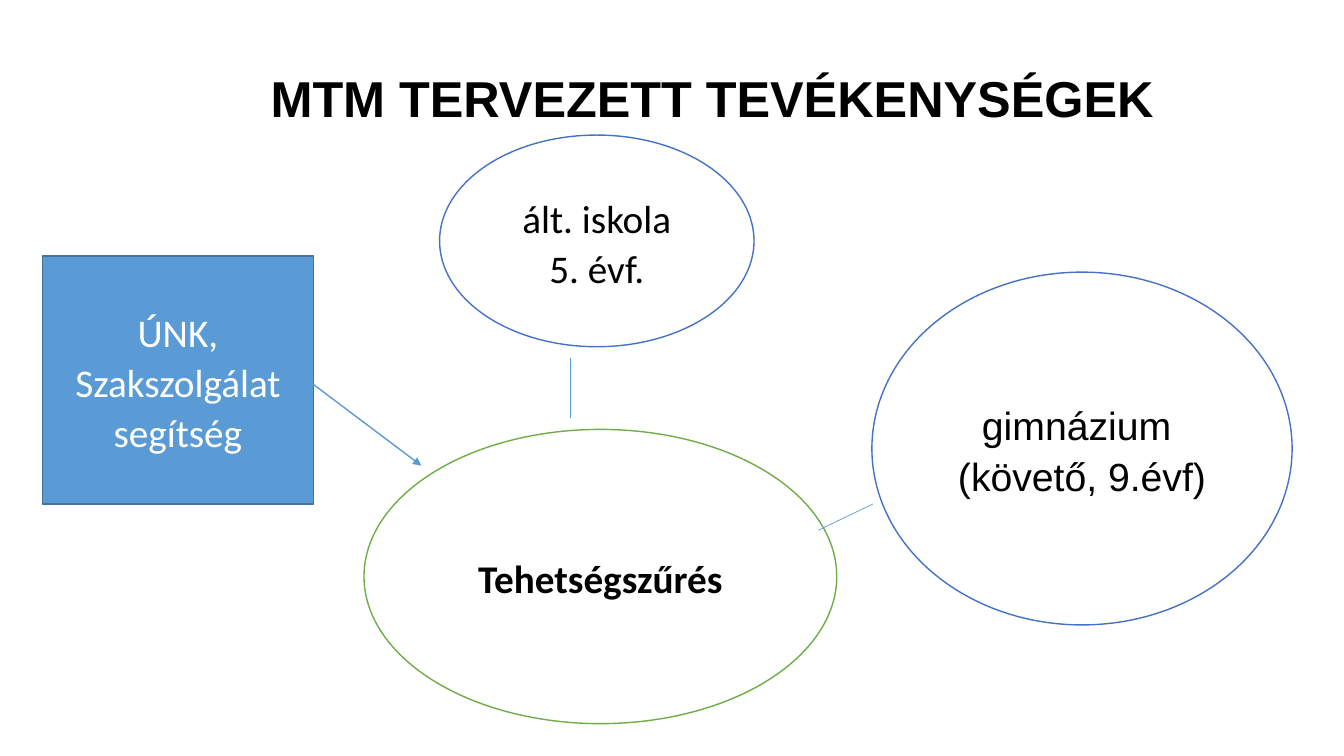
import pptx
import pptx.util
import pptx.dml.color
import pptx.enum.shapes
import pptx.enum.text
import pptx.oxml.ns
import lxml.etree

Pt = pptx.util.Pt
SHAPE = pptx.enum.shapes.MSO_SHAPE
COLORS = {
    "black": "000000",
    "white": "FFFFFF",
    "green": "70AD47",
    "blue": "4472C4",
    "sky": "5B9BD5",
    "steel": "43739E",
}


def rgb(name):
    return pptx.dml.color.RGBColor.from_string(COLORS[name])


def write_text(sp, lines, size=28, font="Calibri", color="black", bold=False,
               spacing=1.07, after=0):
    tf = sp.text_frame
    tf.word_wrap = True
    tf.vertical_anchor = pptx.enum.text.MSO_ANCHOR.MIDDLE
    tf.text = "\n".join(lines)
    for p in tf.paragraphs:
        p.alignment = pptx.enum.text.PP_ALIGN.CENTER
        p.line_spacing = spacing
        p.space_after = Pt(after)
        p.font.size = Pt(size)
        p.font.name = font
        p.font.bold = bold
        p.font.color.rgb = rgb(color)


def add_title(s, box, text):
    sp = s.shapes.add_textbox(*map(Pt, box))
    write_text(sp, [text], size=36, font="Arial", bold=True, spacing=0.9)


def add_node(s, kind, box, lines, fill, line, **style):
    sp = s.shapes.add_shape(kind, *map(Pt, box))
    sp.shadow.inherit = False
    sp.fill.solid()
    sp.fill.fore_color.rgb = rgb(fill)
    sp.line.color.rgb = rgb(line)
    sp.line.width = Pt(1)
    write_text(sp, lines, **style)


def add_link(s, start, end, width=0.5, arrow=False):
    link = s.shapes.add_connector(
        pptx.enum.shapes.MSO_CONNECTOR.STRAIGHT, *map(Pt, start + end))
    link.line.color.rgb = rgb("sky")
    link.line.width = Pt(width)
    qn = pptx.oxml.ns.qn
    if arrow:
        ln = link.line._get_or_add_ln()
        lxml.etree.SubElement(ln, qn("a:tailEnd"), type="triangle")
    lxml.etree.SubElement(link._element.spPr, qn("a:effectLst"))


def main():
    prs = pptx.Presentation()
    prs.slide_width, prs.slide_height = Pt(960), Pt(540)
    s = prs.slides.add_slide(prs.slide_layouts[6])

    add_title(s, (95, 20, 828, 104.4), "MTM TERVEZETT TEVÉKENYSÉGEK")

    # Talent screening and the schools taking part
    add_node(s, SHAPE.OVAL, (260, 306.7, 337.7, 210.2), ["Tehetségszűrés"],
             "white", "green", bold=True, after=8)
    add_node(s, SHAPE.OVAL, (622.8, 194.4, 300.2, 252),
             ["gimnázium ", "(követő, 9.évf)"], "white", "blue", font="Arial")
    add_node(s, SHAPE.OVAL, (314, 96.5, 224.6, 151.2),
             ["ált. iskola", "5. évf."], "white", "blue")
    add_link(s, (407.5, 255.6), (407.5, 298.8))
    add_link(s, (584.6, 378.7), (623.5, 360))

    # Outside support
    add_node(s, SHAPE.RECTANGLE, (30.2, 183, 193.7, 177),
             ["ÚNK, Szakszolgálat segítség"], "sky", "steel", color="white")
    add_link(s, (219.6, 271.4), (301, 332.6), width=1, arrow=True)

    prs.save("out.pptx")


if __name__ == "__main__":
    main()
